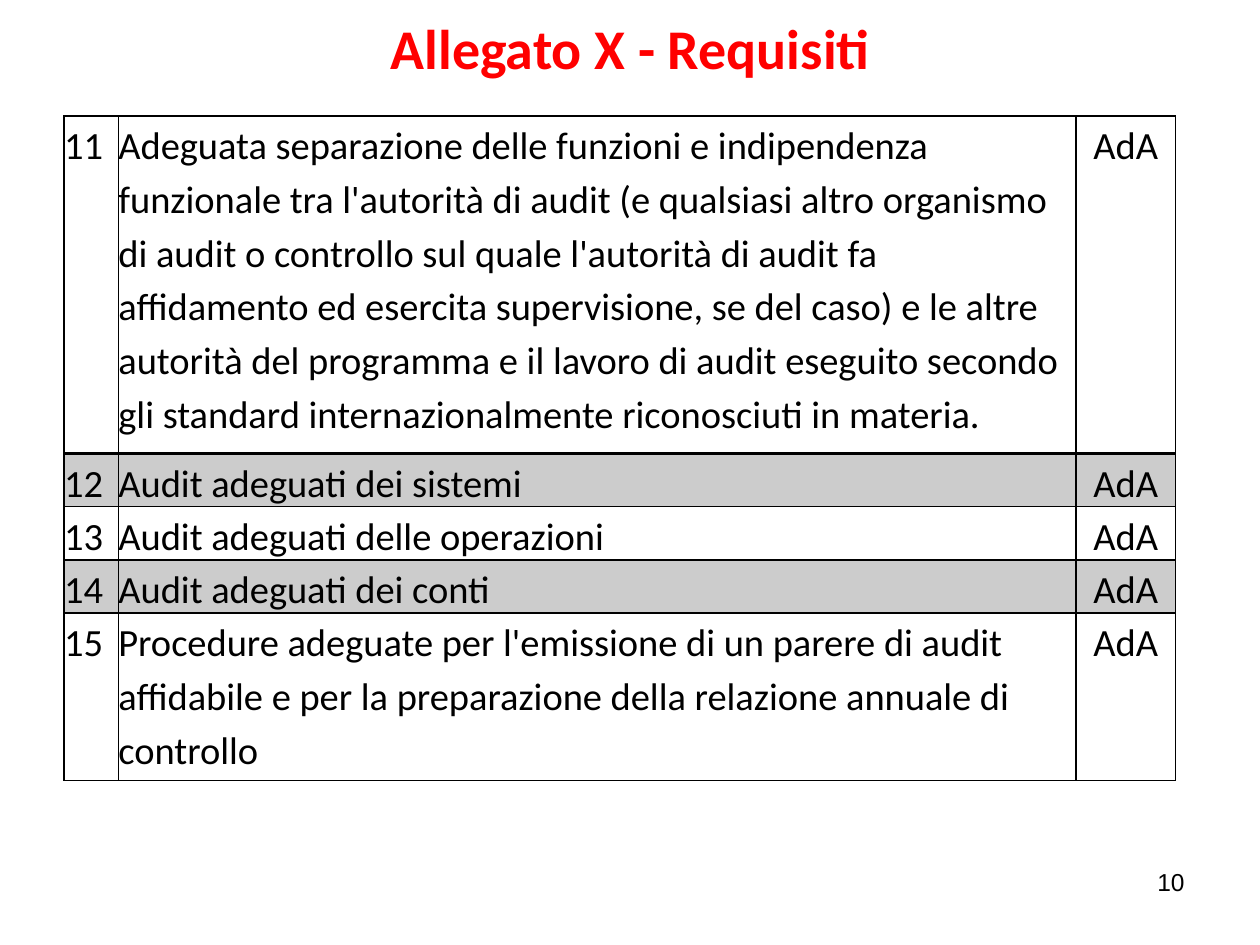
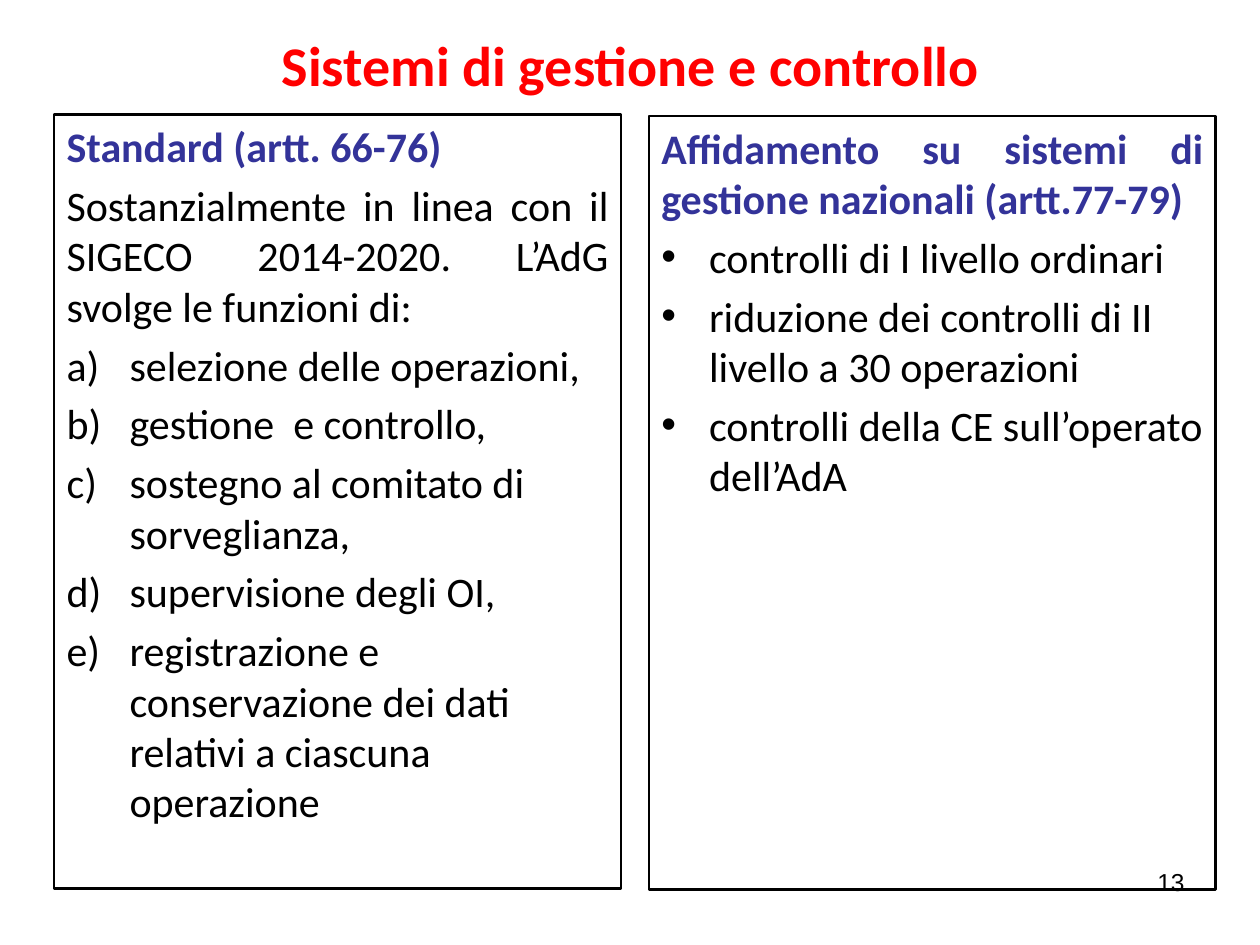
from lxml.etree import SubElement
from pptx import Presentation
from pptx.dml.color import RGBColor
from pptx.enum.shapes import MSO_SHAPE
from pptx.enum.text import MSO_ANCHOR, PP_ALIGN
from pptx.oxml.ns import qn
from pptx.util import Inches, Pt

RED = RGBColor(0xFF, 0x00, 0x00)
INDIGO = RGBColor(0x33, 0x33, 0x99)
BLACK = RGBColor(0x00, 0x00, 0x00)
WHITE = RGBColor(0xFF, 0xFF, 0xFF)
GREY = RGBColor(0xCC, 0xCC, 0xCC)

TITLE = dict(name="Calibri", size=Pt(32), bold=True)
NUMBER = dict(name="Arial", size=Pt(14), bold=False)
CELL = dict(name="Calibri", size=Pt(22), bold=False)
HEADING = dict(name="Calibri", size=Pt(24), bold=True)
BODY = {**HEADING, "bold": False}

CELL_SPACING = dict(line_spacing=1.15, space_before=Pt(3), space_after=Pt(3))
PANEL_SPACING = dict(space_before=Pt(4.8))
NO_MARGINS = dict.fromkeys(
    ("margin_left", "margin_right", "margin_top", "margin_bottom"), 0)

LETTERED = (0.5, "buAutoNum", dict(type="alphaLcParenR"))
BULLETED = (0.38, "buChar", dict(char="•"))

COLUMN_WIDTHS = (0.43, 7.6, 0.79)
COLUMN_ALIGNS = (PP_ALIGN.JUSTIFY, PP_ALIGN.LEFT, PP_ALIGN.CENTER)
ROW_HEIGHTS = (2.68, 0.42, 0.42, 0.42, 1.33)
FIRST_REQUIREMENT = 11
REQUIREMENTS = (
    "Adeguata separazione delle funzioni e indipendenza funzionale tra "
    "l'autorità di audit (e qualsiasi altro organismo di audit o controllo "
    "sul quale l'autorità di audit fa affidamento ed esercita supervisione, "
    "se del caso) e le altre autorità del programma e il lavoro di audit "
    "eseguito secondo gli standard internazionalmente riconosciuti in materia.",
    "Audit adeguati dei sistemi",
    "Audit adeguati delle operazioni",
    "Audit adeguati dei conti",
    "Procedure adeguate per l'emissione di un parere di audit affidabile e "
    "per la preparazione della relazione annuale di controllo",
)

STANDARD_INTRO = ("Sostanzialmente in linea con il SIGECO 2014-2020. "
                  "L’AdG svolge le funzioni di:")
STANDARD_TASKS = (
    "selezione delle operazioni,",
    "gestione  e controllo,",
    "sostegno al comitato di sorveglianza,",
    "supervisione degli OI,",
    "registrazione e conservazione dei dati relativi a ciascuna operazione",
)
NATIONAL_CHECKS = (
    "controlli di I livello ordinari",
    "riduzione dei controlli di II livello a 30 operazioni",
    "controlli della CE sull’operato dell’AdA",
)


def set_all(target, values):
    for name, value in values.items():
        setattr(target, name, value)


def write(p, text, font, color, align, spacing=None):
    set_all(p, {"alignment": align, **(spacing or {})})
    r = p.add_run()
    r.text = text
    set_all(r.font, font)
    r.font.color.rgb = color


def add_label(slide, box, text, font, color, align, anchor):
    tf = slide.shapes.add_textbox(*map(Inches, box)).text_frame
    set_all(tf, dict(word_wrap=True, vertical_anchor=anchor))
    write(tf.paragraphs[0], text, font, color, align)


def add_slide(prs, title, title_height, number):
    slide = prs.slides.add_slide(prs.slide_layouts[6])
    add_label(slide, (0.2, 0.11, 9.61, title_height), title, TITLE, RED,
              PP_ALIGN.CENTER, MSO_ANCHOR.MIDDLE)
    return slide, number


def add_number(slide, number):
    add_label(slide, (7.17, 6.83, 2.33, 0.52), str(number), NUMBER, BLACK,
              PP_ALIGN.RIGHT, MSO_ANCHOR.TOP)


def set_borders(cell, widths):
    """Draw black cell edges; widths maps L, R, T and B to points."""
    tc_pr = cell._tc.get_or_add_tcPr()
    for side, width in widths.items():
        ln = SubElement(tc_pr, qn(f"a:ln{side}"), w=str(Pt(width)))
        fill = SubElement(ln, qn("a:solidFill"))
        SubElement(fill, qn("a:srgbClr"), val=str(BLACK))


def add_requirements_table(slide):
    size = len(ROW_HEIGHTS), len(COLUMN_WIDTHS)
    box = 0.51, 0.92, sum(COLUMN_WIDTHS), sum(ROW_HEIGHTS)
    table = slide.shapes.add_table(*size, *map(Inches, box)).table
    set_all(table, dict(first_row=False, horz_banding=False))
    for column, width in zip(table.columns, COLUMN_WIDTHS):
        column.width = Inches(width)
    for i, (row, height) in enumerate(zip(table.rows, ROW_HEIGHTS)):
        row.height = Inches(height)
        texts = str(FIRST_REQUIREMENT + i), REQUIREMENTS[i], "AdA"
        for cell, text, align in zip(row.cells, texts, COLUMN_ALIGNS):
            set_all(cell, NO_MARGINS)
            # A thicker rule separates the first requirement from the rest
            set_borders(cell, dict(L=1, R=1, T=2 if i == 1 else 1,
                                   B=2 if i == 0 else 1))
            cell.fill.solid()
            cell.fill.fore_color.rgb = GREY if i % 2 else WHITE
            write(cell.text_frame.paragraphs[0], text, CELL, BLACK, align,
                  CELL_SPACING)


def set_bullet(p, indent, tag, attributes):
    p_pr = p._p.get_or_add_pPr()
    p_pr.set("marL", str(Inches(indent)))
    p_pr.set("indent", str(-Inches(indent)))
    SubElement(p_pr, qn("a:buFont"), typeface="Arial")
    SubElement(p_pr, qn(f"a:{tag}"), attributes)


def add_panel(slide, left, top, heading, items, bullet, intro=None):
    sp = slide.shapes.add_shape(MSO_SHAPE.RECTANGLE,
                                *map(Inches, (left, top, 4.5, 6.14)))
    sp.shadow.inherit = False
    sp.fill.background()
    sp.line.color.rgb = BLACK
    sp.line.width = Pt(1.5)
    tf = sp.text_frame
    set_all(tf, dict(word_wrap=True, vertical_anchor=MSO_ANCHOR.TOP))
    write(tf.paragraphs[0], heading, HEADING, INDIGO, PP_ALIGN.JUSTIFY,
          PANEL_SPACING)
    if intro:
        write(tf.add_paragraph(), intro, BODY, BLACK, PP_ALIGN.JUSTIFY,
              PANEL_SPACING)
    for item in items:
        p = tf.add_paragraph()
        write(p, item, BODY, BLACK, PP_ALIGN.LEFT, PANEL_SPACING)
        set_bullet(p, *bullet)


def main():
    prs = Presentation()
    set_all(prs, dict(slide_width=Inches(10), slide_height=Inches(7.5)))

    slide, number = add_slide(prs, "Allegato X - Requisiti", 0.52, 10)
    add_number(slide, number)
    add_requirements_table(slide)

    slide, number = add_slide(prs, "Sistemi di gestione e controllo", 0.79, 13)
    add_number(slide, number)
    add_panel(slide, 5.15, 0.92,
              "Affidamento su sistemi di gestione nazionali (artt.77-79)",
              NATIONAL_CHECKS, BULLETED)
    add_panel(slide, 0.43, 0.91, "Standard (artt. 66-76)",
              STANDARD_TASKS, LETTERED, STANDARD_INTRO)

    prs.save("out.pptx")


if __name__ == "__main__":
    main()
